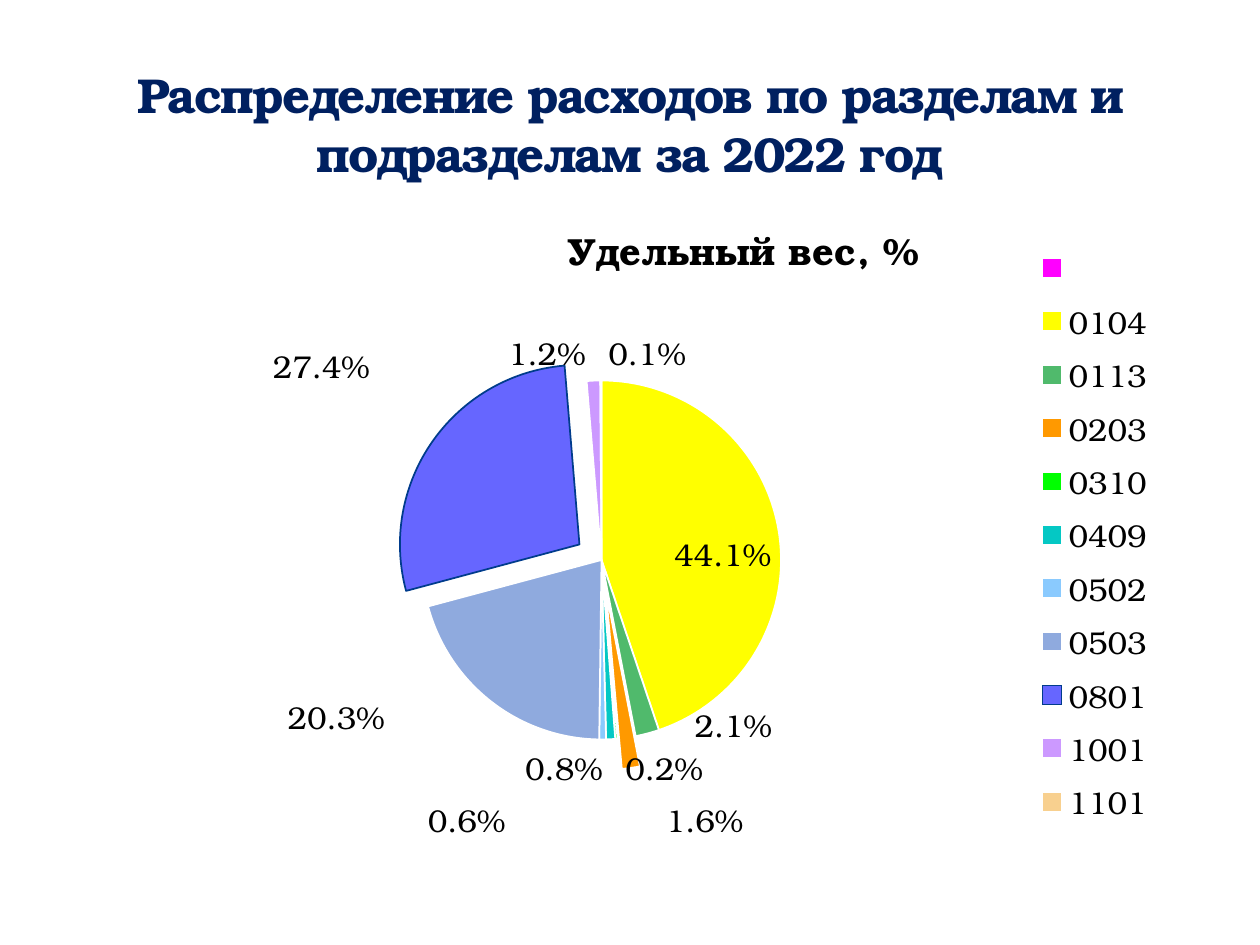
from pptx import Presentation
from pptx.chart.data import CategoryChartData
from pptx.dml.color import RGBColor
from pptx.enum.chart import XL_CHART_TYPE, XL_LABEL_POSITION, XL_LEGEND_POSITION
from pptx.enum.text import MSO_ANCHOR, PP_ALIGN
from pptx.oxml import parse_xml
from pptx.oxml.ns import nsdecls
from pptx.util import Inches, Pt

PIE = XL_CHART_TYPE.PIE
INSIDE, OUTSIDE = XL_LABEL_POSITION.INSIDE_END, XL_LABEL_POSITION.OUTSIDE_END
BEST_FIT = XL_LABEL_POSITION.BEST_FIT
RIGHT = XL_LEGEND_POSITION.RIGHT
BOTTOM = MSO_ANCHOR.BOTTOM
CENTER = PP_ALIGN.CENTER

FONT = "TeX Gyre Bonum"
NAVY = RGBColor(0x00, 0x20, 0x60)
BLACK = RGBColor(0x00, 0x00, 0x00)
WHITE = RGBColor(0xFF, 0xFF, 0xFF)
EDGE = RGBColor(0x00, 0x3C, 0x8C)
OUTLINE = RGBColor(0xAF, 0xCC, 0xDE)
MAGENTA = RGBColor(0xFF, 0x00, 0xFF)
YELLOW = RGBColor(0xFF, 0xFF, 0x00)
GREEN = RGBColor(0x50, 0xBA, 0x6C)
ORANGE = RGBColor(0xFF, 0x99, 0x00)
LIME = RGBColor(0x00, 0xFF, 0x00)
TEAL = RGBColor(0x04, 0xC8, 0xC4)
SKY = RGBColor(0x8A, 0xCA, 0xFE)
BLUE = RGBColor(0x8F, 0xAA, 0xDE)
VIOLET = RGBColor(0x66, 0x66, 0xFF)
LILAC = RGBColor(0xCC, 0x99, 0xFF)
GOLD = RGBColor(0xF8, 0xD0, 0x8F)

SECTIONS = [
    ("", None, MAGENTA),
    ("0104", 0.441, YELLOW),
    ("0113", 0.021, GREEN),
    ("0203", 0.016, ORANGE),
    ("0310", 0.002, LIME),
    ("0409", 0.008, TEAL),
    ("0502", 0.006, SKY),
    ("0503", 0.203, BLUE),
    ("0801", 0.274, VIOLET),
    ("1001", 0.012, LILAC),
    ("1101", 0.001, GOLD),
]
EXPLOSIONS = {"0203": 17, "0801": 15}
LABEL_SHIFTS = {
    "0113": (0.04, -0.06),
    "0203": (0.03, 0.09),
    "0502": (-0.12, 0.13),
    "0503": (-0.09, -0.02),
    "0801": (-0.05, -0.08),
}


def place(parent, index, **fields):
    """Give a chart part a manual layout in fractions of the chart."""
    for old in parent.xpath("c:layout"):
        parent.remove(old)
    body = "".join(f'<c:{name} val="{value}"/>' for name, value in fields.items())
    parent.insert(index, parse_xml(
        f'<c:layout {nsdecls("c")}><c:manualLayout>{body}</c:manualLayout></c:layout>'))


class Deck:
    """Hold the style and the current slide."""

    def __init__(self, prs):
        self.slide = prs.slides.add_slide(prs.slide_layouts[5])

    def style(self, font, size, color, bold=False):
        """Apply the deck's typeface to a font."""
        font.name, font.size, font.bold = FONT, Pt(size), bold
        font.color.rgb = color

    def title(self, text, x, y, w, h):
        """Fill and move the title placeholder."""
        sp = self.slide.shapes.title
        sp.left, sp.top, sp.width, sp.height = map(Inches, (x, y, w, h))
        tf = sp.text_frame
        tf.vertical_anchor = BOTTOM
        p = tf.paragraphs[0]
        p.alignment = CENTER
        r = p.add_run()
        r.text = text
        self.style(r.font, 28, NAVY, True)
        props = r._r.get_or_add_rPr()
        props.set("spc", "-100")
        props.insert(0, parse_xml(
            f'<a:ln {nsdecls("a")} w="3175"><a:solidFill><a:srgbClr val="{OUTLINE}">'
            '<a:alpha val="25000"/></a:srgbClr></a:solidFill></a:ln>'))

    def pie(self, heading, sections, x, y, w, h):
        """Add a pie chart with a heading, a legend and value labels."""
        data = CategoryChartData(number_format="0.0%")
        data.categories = [name for name, _, _ in sections]
        data.add_series("Series 1", [value for _, value, _ in sections])
        frame = self.slide.shapes.add_chart(PIE, *map(Inches, (x, y, w, h)), data)
        chart = frame.chart
        self.style(chart.font, 18, BLACK)
        chart.has_title = True
        r = chart.chart_title.text_frame.paragraphs[0].add_run()
        r.text = heading
        self.style(r.font, 21.6, BLACK, True)
        chart.has_legend = True
        chart.legend.position = RIGHT
        chart.legend.include_in_layout = False
        title, plot_area, legend = (
            chart.element.xpath(f"c:chart/c:{part}")[0]
            for part in ("title", "plotArea", "legend"))
        edges = {"xMode": "edge", "yMode": "edge"}
        place(title, 1, **edges, x=0.44, y=0)
        place(legend, 1, **edges, x=0.85, y=0.04, w=0.12, h=0.95)
        place(plot_area, 0, layoutTarget="inner", **edges, x=0.31, y=0.27, w=0.33, h=0.57)
        self.slices(chart.plots[0], sections)

    def slices(self, plot, sections):
        """Colour, pull out and label the slices."""
        plot.vary_by_categories = True
        series = plot.series[0]
        labels = series.data_labels
        labels.show_value = True
        labels.show_percentage = False
        labels.number_format, labels.number_format_is_linked = "0.0%", False
        labels.position = BEST_FIT
        self.style(labels.font, 18, BLACK)
        ser = series._element
        for i, (name, _, color) in enumerate(sections):
            point = series.points[i]
            point.format.fill.solid()
            point.format.fill.fore_color.rgb = color
            point.format.line.color.rgb = EDGE if color == VIOLET else WHITE
            point.format.line.width = Pt(1)
            if name in EXPLOSIONS:
                props = ser.xpath(f"c:dPt[c:idx/@val='{i}']/c:spPr")[0]
                props.addprevious(parse_xml(
                    f'<c:explosion {nsdecls("c")} val="{EXPLOSIONS[name]}"/>'))
            if name == "0104":
                point.data_label.position = INSIDE
            if name in LABEL_SHIFTS:
                point.data_label.position = OUTSIDE
                label = ser.xpath(f"c:dLbls/c:dLbl[c:idx/@val='{i}']")[0]
                dx, dy = LABEL_SHIFTS[name]
                place(label, 1, x=dx, y=dy)
        group = ser.xpath("c:dLbls")[0]
        for old in group.xpath("c:showLeaderLines"):
            group.remove(old)
        group.append(parse_xml(f'<c:showLeaderLines {nsdecls("c")} val="0"/>'))


def main():
    """Build the slide and save it."""
    prs = Presentation()
    prs.slide_width, prs.slide_height = Inches(10), Inches(7.5)
    deck = Deck(prs)
    deck.pie("Удельный вес, %", SECTIONS, 0.5, 1.67, 9, 5)
    deck.title("Распределение расходов по разделам и подразделам за 2022 год",
               0.5, 0.17, 9, 1.33)
    prs.save("out.pptx")


if __name__ == "__main__":
    main()
